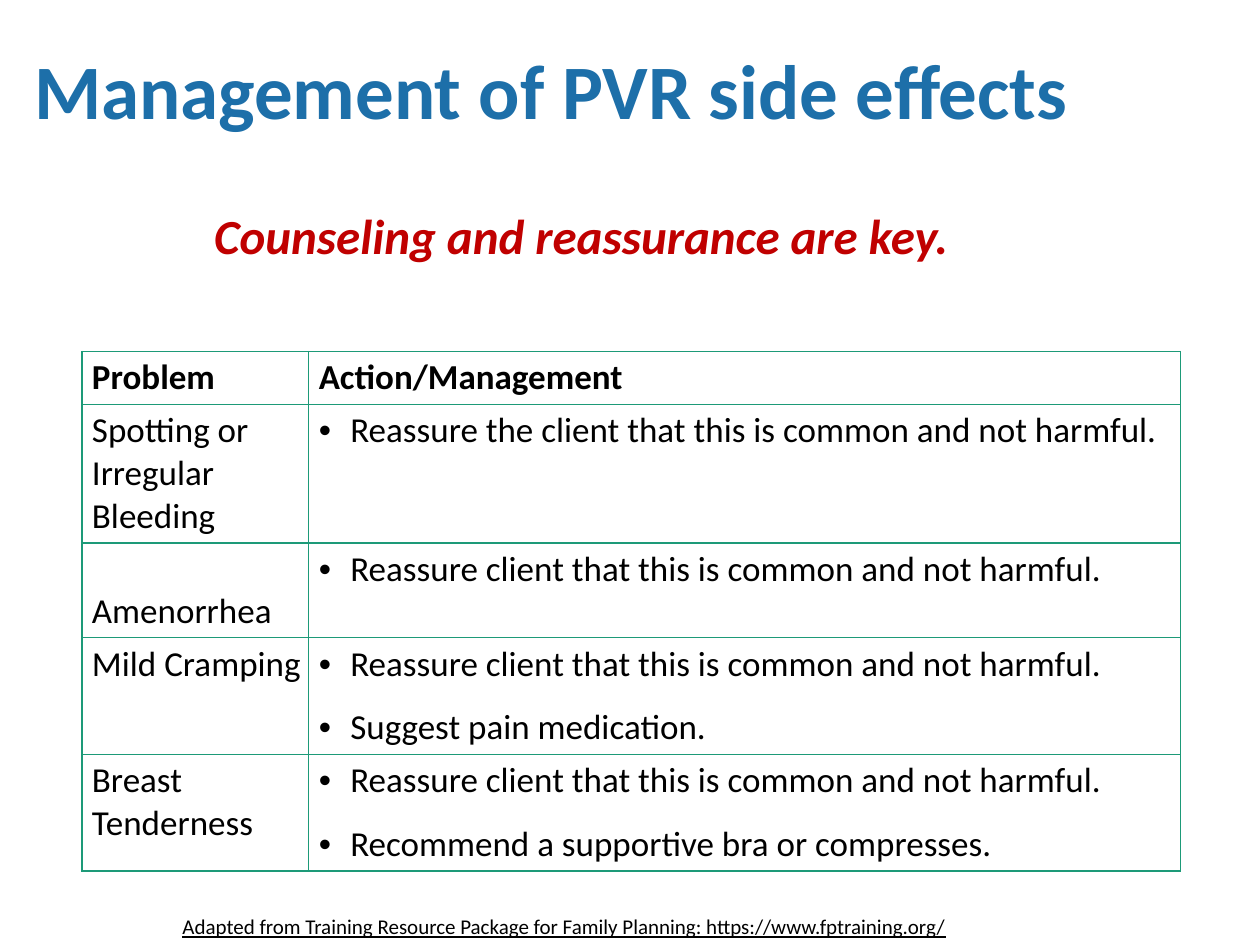
from dataclasses import dataclass

from lxml import etree
from pptx import Presentation
from pptx.dml.color import RGBColor
from pptx.enum.text import MSO_ANCHOR
from pptx.oxml.ns import qn
from pptx.util import Inches, Pt

TOP, MIDDLE, BOTTOM = MSO_ANCHOR.TOP, MSO_ANCHOR.MIDDLE, MSO_ANCHOR.BOTTOM
WIDTH, HEIGHT = 10, 7.5
COLUMNS = (1.8, 6.92)
ROWS = (0.41, 1.1, 0.75, 0.92, 0.92)
COMMON = "Reassure client that this is common and not harmful."
PROBLEMS = (
    ("Spotting or Irregular Bleeding",
     ["Reassure the client that this is common and not harmful."], TOP),
    ("Amenorrhea", [COMMON], BOTTOM),
    ("Mild Cramping", [COMMON, "Suggest pain medication."], TOP),
    ("Breast Tenderness",
     [COMMON, "Recommend a supportive bra or compresses."], TOP),
)


@dataclass(frozen=True)
class Theme:
    """Colours, font and type sizes of the slide."""
    font: str = "Calibri"
    title: str = "1D6FA9"
    accent: str = "C00000"
    ink: str = "000000"
    grid: str = "1D9A78"
    title_size: int = 44
    message_size: int = 28
    body_size: int = 20
    source_size: int = 12


THEME = Theme()


def write(para, text, size=THEME.body_size, color=THEME.ink,
          bold=False, italic=False, underline=False):
    """Add formatted text to a paragraph."""
    span = para.add_run()
    span.text = text
    font = span.font
    font.name, font.size = THEME.font, Pt(size)
    font.bold, font.italic, font.underline = bold, italic, underline
    font.color.rgb = RGBColor.from_string(color)


def set_margins(target, left, top, right, bottom):
    """Set the inner margins of a cell or text frame in inches."""
    target.margin_left, target.margin_top = Inches(left), Inches(top)
    target.margin_right, target.margin_bottom = Inches(right), Inches(bottom)


def add_text(page, text, place, spacing=1, anchor=TOP,
             margins=(0.07, 0.04, 0.07, 0.04), **style):
    """Add a text box placed by shares of the slide's size."""
    left, top, width, height = place
    box = page.shapes.add_textbox(
        Inches(left * WIDTH), Inches(top * HEIGHT),
        Inches(width * WIDTH), Inches(height * HEIGHT))
    frame = box.text_frame
    frame.word_wrap = True
    frame.vertical_anchor = anchor
    set_margins(frame, *margins)
    para = frame.paragraphs[0]
    para.line_spacing = spacing
    write(para, text, **style)


def add_bullet(para):
    """Give a paragraph a hanging bullet."""
    properties = para._p.get_or_add_pPr()
    properties.set("marL", str(Inches(0.25)))
    properties.set("indent", str(-Inches(0.25)))
    color = etree.SubElement(properties, qn("a:buClr"))
    etree.SubElement(color, qn("a:srgbClr"), val=THEME.ink)
    etree.SubElement(properties, qn("a:buFont"), typeface="Arial")
    etree.SubElement(properties, qn("a:buChar"), char="•")


def add_borders(cell):
    """Draw a thin line on all four sides of a cell."""
    properties = cell._tc.get_or_add_tcPr()
    for side in "LRTB":
        line = etree.SubElement(properties, qn(f"a:ln{side}"), w=str(Pt(1)))
        fill = etree.SubElement(line, qn("a:solidFill"))
        etree.SubElement(fill, qn("a:srgbClr"), val=THEME.grid)


def fill_cell(cell, lines, bulleted=False, anchor=TOP, bold=False):
    """Write lines into a table cell."""
    add_borders(cell)
    cell.fill.background()
    set_margins(cell, 0.08, 0.04, 0.04, 0.04)
    cell.vertical_anchor = anchor
    frame = cell.text_frame
    for index, text in enumerate(lines):
        para = frame.add_paragraph() if index else frame.paragraphs[0]
        if index:
            para.space_before = Pt(12)
        if bulleted:
            add_bullet(para)
        write(para, text, bold=bold)


def add_problem_table(page):
    """Add the table of problems and their management."""
    table = page.shapes.add_table(
        len(ROWS), len(COLUMNS), Inches(0.65), Inches(2.79),
        Inches(sum(COLUMNS)), Inches(sum(ROWS))).table
    table.first_row = table.horz_banding = False
    for column, width in zip(table.columns, COLUMNS):
        column.width = Inches(width)
    for row, height in zip(table.rows, ROWS):
        row.height = Inches(height)
    for column, heading in enumerate(("Problem", "Action/Management")):
        fill_cell(table.cell(0, column), [heading], bold=True)
    for row, (problem, actions, anchor) in enumerate(PROBLEMS, start=1):
        fill_cell(table.cell(row, 0), [problem], anchor=anchor)
        fill_cell(table.cell(row, 1), actions, bulleted=True)


def main():
    """Build and save the slide."""
    deck = Presentation()
    deck.slide_width, deck.slide_height = Inches(WIDTH), Inches(HEIGHT)
    page = deck.slides.add_slide(deck.slide_layouts[6])
    add_problem_table(page)
    add_text(page, "Counseling and reassurance are key.",
             (0.163, 0.217, 0.722, 0.116), spacing=0.95,
             size=THEME.message_size, color=THEME.accent,
             bold=True, italic=True)
    add_text(page, "Management of PVR side effects",
             (0.02, 0.037, 0.955, 0.125), spacing=0.9, anchor=MIDDLE,
             size=THEME.title_size, color=THEME.title, bold=True)
    add_text(page, "Adapted from Training Resource Package for Family "
             "Planning: https://www.fptraining.org/",
             (0.135, 0.96, 0.694, 0.036), margins=(0.1, 0.05, 0.1, 0.05),
             size=THEME.source_size, underline=True)
    deck.save("out.pptx")


if __name__ == "__main__":
    main()
